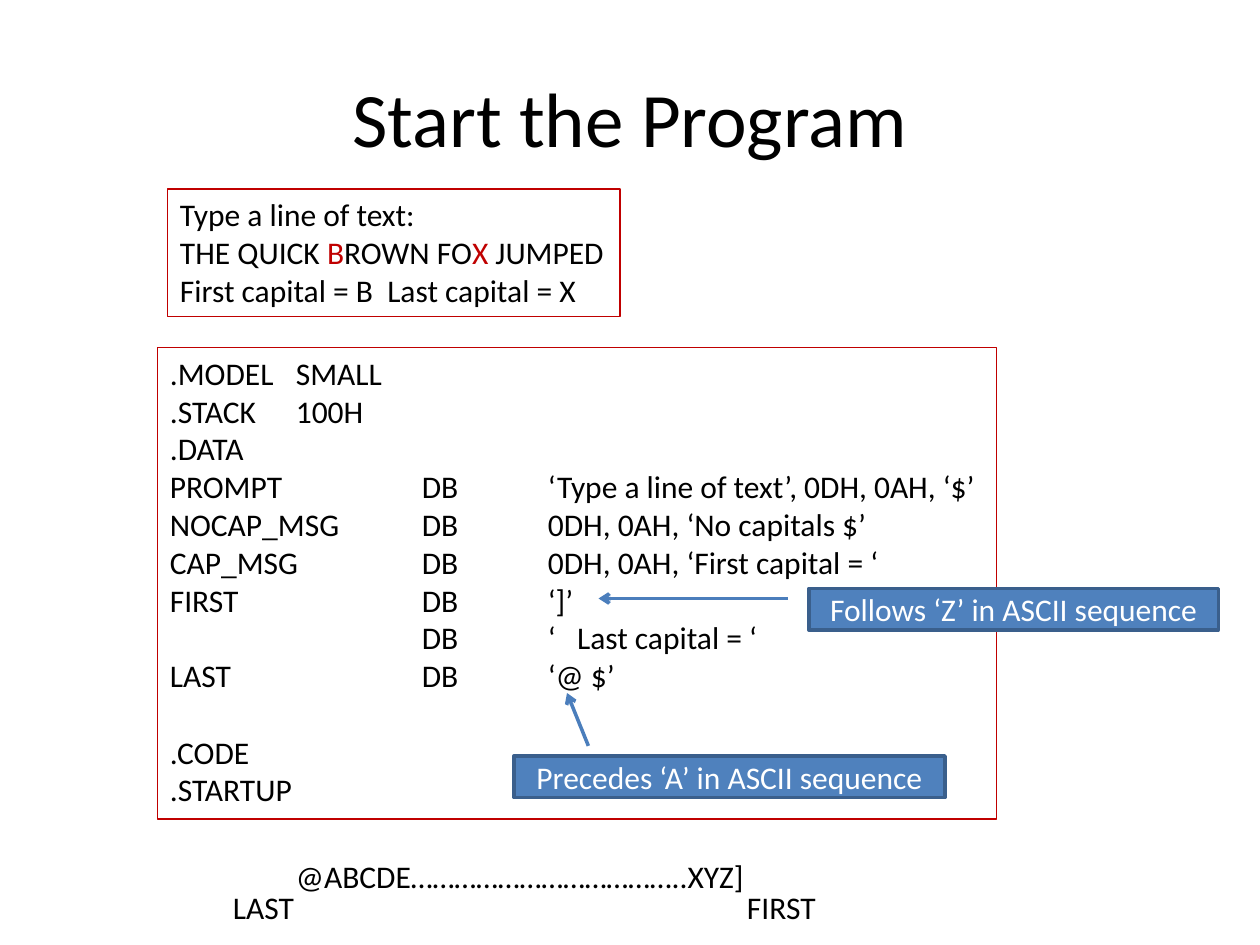
from lxml.etree import SubElement
from pptx import Presentation
from pptx.dml.color import RGBColor
from pptx.enum.shapes import MSO_CONNECTOR, MSO_SHAPE
from pptx.enum.text import MSO_ANCHOR as ANCHOR, MSO_AUTO_SIZE as AUTO, PP_ALIGN as ALIGN
from pptx.oxml.ns import qn
from pptx.util import Emu, Pt

PX = 9144  # 100 px to the inch
FONT = "Calibri"
BLACK = RGBColor(0x00, 0x00, 0x00)
WHITE = RGBColor(0xFF, 0xFF, 0xFF)
RED = RGBColor(0xC0, 0x00, 0x00)
BLUE = RGBColor(0x4F, 0x81, 0xBD)
BLUE_EDGE = RGBColor(0x3A, 0x5F, 0x8C)
BLUE_ARROW = RGBColor(0x4B, 0x7E, 0xBC)

TITLE = ("Start the Program", (50, 30, 900, 125))

# A line is a string, or a list of (text, colour) runs.
DATA_SEGMENT = [
    ".MODEL \tSMALL",
    ".STACK\t100H",
    ".DATA",
    "PROMPT\t\tDB\t‘Type a line of text’, 0DH, 0AH, ‘$’",
    "NOCAP_MSG\tDB\t0DH, 0AH, ‘No capitals $’",
    "CAP_MSG\tDB\t0DH, 0AH, ‘First capital = ‘",
    "FIRST\t\tDB\t‘]’",
    "\t\tDB\t‘   Last capital = ‘",
    "LAST\t\tDB\t‘@ $’",
]
CODE_SEGMENT = [".CODE", ".STARTUP"]
SAMPLE_RUN = [
    "Type a line of text:",
    [("THE QUICK ", BLACK), ("B", RED), ("ROWN FO", BLACK), ("X", RED), (" JUMPED", BLACK)],
    "First capital = B  Last capital = X",
]
TAB_STOPS = (100, 200, 300)
PANELS = [
    (DATA_SEGMENT + CODE_SEGMENT, (125, 276, 666, 374), {len(DATA_SEGMENT): 22}),
    (SAMPLE_RUN, (133, 150, 359, 101), {}),
]
CALLOUTS = [
    ("Follows ‘Z’ in ASCII sequence", (642, 467, 325, 33)),
    ("Precedes ‘A’ in ASCII sequence", (408, 600, 342, 33)),
]
ARROWS = [(467, 592, 450, 550), (625, 475, 475, 475)]
SEQUENCE = [
    ("@ABCDE………………………………..XYZ]", (225, 675, 379, 40)),
    ("FIRST", (583, 700, 75, 40)),
    ("LAST", (175, 700, 69, 40)),
]


def emu(lengths):
    return [Emu(n * PX) for n in lengths]


def add_tab_stops(p):
    tabs = SubElement(p._p.get_or_add_pPr(), qn("a:tabLst"))
    for pos in emu(TAB_STOPS):
        SubElement(tabs, qn("a:tab"), pos=str(int(pos)), algn="l")


def set_text(sp, lines, size=18, color=BLACK, align=ALIGN.LEFT,
             anchor=ANCHOR.TOP, wrap=True, gaps=None):
    """Fill sp with lines; gaps maps a line index to its space before, in points."""
    tf = sp.text_frame
    tf.word_wrap = wrap
    tf.auto_size = AUTO.NONE if wrap else AUTO.SHAPE_TO_FIT_TEXT
    tf.vertical_anchor = anchor
    for i, line in enumerate(lines):
        p = tf.paragraphs[0] if i == 0 else tf.add_paragraph()
        p.alignment = align
        if gaps and i in gaps:
            p.space_before = Pt(gaps[i])
        if "\t" in line:
            add_tab_stops(p)
        for text, run_color in [(line, color)] if isinstance(line, str) else line:
            r = p.add_run()
            r.text = text
            r.font.name = FONT
            r.font.size = Pt(size)
            r.font.color.rgb = run_color


def add_box(shapes, box, line, width, fill=None):
    sp = shapes.add_shape(MSO_SHAPE.RECTANGLE, *emu(box))
    sp.shadow.inherit = False
    if fill is None:
        sp.fill.background()
    else:
        sp.fill.solid()
        sp.fill.fore_color.rgb = fill
    sp.line.color.rgb = line
    sp.line.width = Pt(width)
    return sp


def add_arrow(shapes, ends):
    cxn = shapes.add_connector(MSO_CONNECTOR.STRAIGHT, *emu(ends))
    cxn.line.color.rgb = BLUE_ARROW
    cxn.line.width = Pt(2)
    sp_pr = cxn._element.spPr
    SubElement(sp_pr.find(qn("a:ln")), qn("a:tailEnd"), type="arrow")
    SubElement(sp_pr, qn("a:effectLst"))


def main():
    prs = Presentation()
    prs.slide_width, prs.slide_height = emu((1000, 750))
    s = prs.slides.add_slide(prs.slide_layouts[6])

    title, box = TITLE
    set_text(s.shapes.add_textbox(*emu(box)), [title], size=44,
             align=ALIGN.CENTER, anchor=ANCHOR.MIDDLE)
    for lines, box, gaps in PANELS:
        set_text(add_box(s.shapes, box, RED, 0.75), lines, wrap=False, gaps=gaps)
    for text, box in CALLOUTS:
        set_text(add_box(s.shapes, box, BLUE_EDGE, 2, BLUE), [text], color=WHITE,
                 align=ALIGN.CENTER, anchor=ANCHOR.MIDDLE)
    for ends in ARROWS:
        add_arrow(s.shapes, ends)
    group = s.shapes.add_group_shape()
    for text, box in SEQUENCE:
        set_text(group.shapes.add_textbox(*emu(box)), [text], wrap=False)

    prs.save("out.pptx")


if __name__ == "__main__":
    main()
